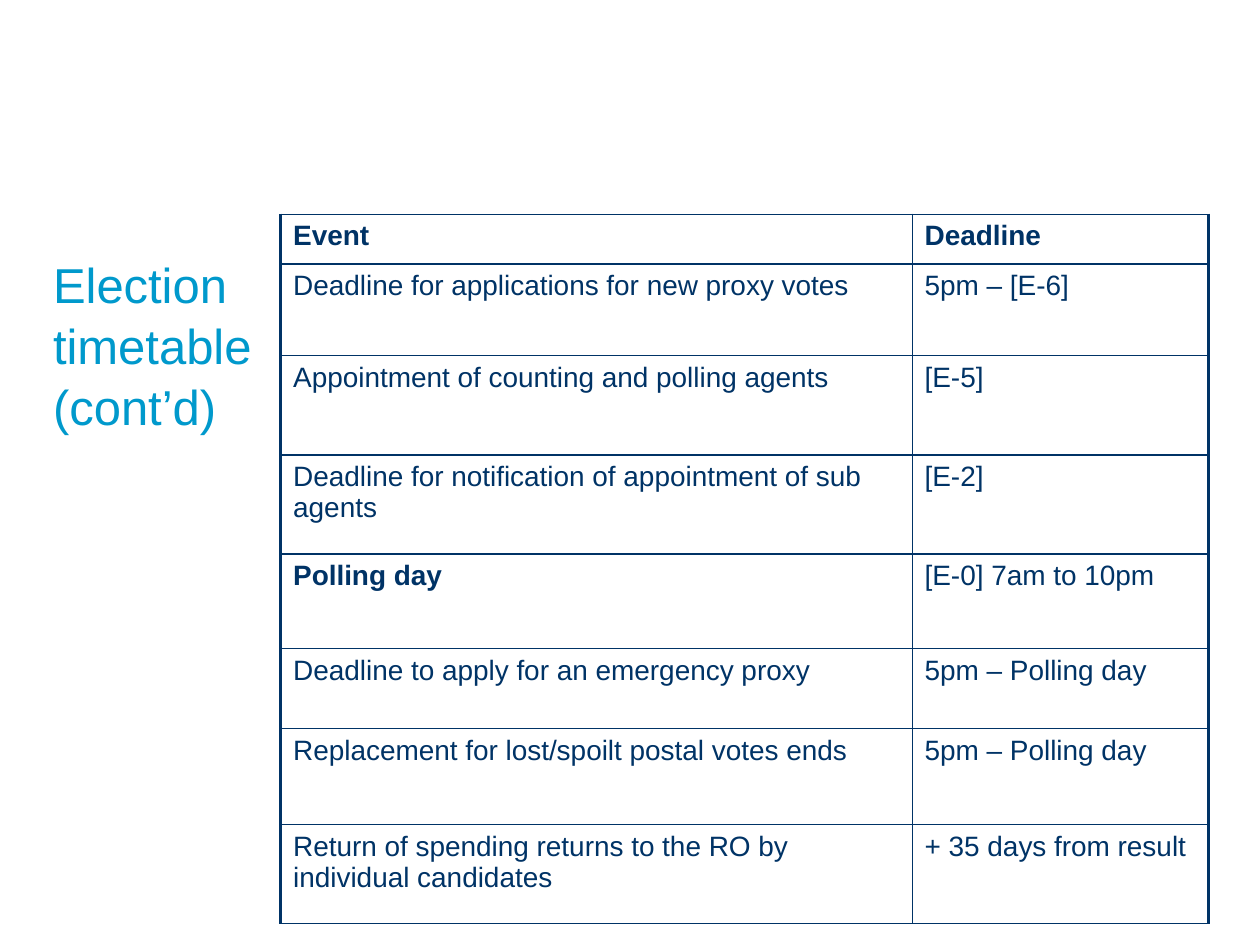
from dataclasses import dataclass

from pptx import Presentation
from pptx.dml.color import RGBColor
from pptx.enum.text import MSO_ANCHOR
from pptx.oxml.ns import qn
from pptx.util import Cm, Pt
from lxml.etree import SubElement


@dataclass(frozen=True)
class Theme:
    font: str = "Arial"
    title_color: str = "0099CC"
    ink: str = "003366"
    title_size: float = 28
    body_size: float = 16
    thin: float = 1
    thick: float = 2.25


@dataclass(frozen=True)
class Row:
    event: str
    deadline: str
    height: float
    event_bold: bool = False
    deadline_bold: bool = False


THEME = Theme()
COLUMN_WIDTHS = (12.73, 5.97)
ROWS = [
    Row("Event", "Deadline", 1, True, True),
    Row("Deadline for applications for new proxy votes", "5pm – [E-6]", 1.85),
    Row("Appointment of counting and polling agents", "[E-5]", 2),
    Row("Deadline for notification of appointment of sub agents", "[E-2]", 2),
    Row("Polling day", "[E-0] 7am to 10pm", 1.9, True),
    Row("Deadline to apply for an emergency proxy", "5pm – Polling day", 1.62),
    Row("Replacement for lost/spoilt postal votes ends", "5pm – Polling day", 1.93),
    Row("Return of spending returns to the RO by individual candidates",
        "+ 35 days from result", 2),
]


def add_run(p, text: str, size: float, color: str, bold: bool = False) -> None:
    r = p.add_run()
    r.text = text
    r.font.name = THEME.font
    r.font.size = Pt(size)
    r.font.bold = bold
    r.font.color.rgb = RGBColor.from_string(color)


def set_borders(cell, left: float, right: float) -> None:
    """Draw the four cell borders; top and bottom are thin."""
    tc_pr = cell._tc.get_or_add_tcPr()
    widths = {"a:lnL": left, "a:lnR": right, "a:lnT": THEME.thin, "a:lnB": THEME.thin}
    for i, (tag, width) in enumerate(widths.items()):
        ln = SubElement(tc_pr, qn(tag), w=str(Pt(width)))
        fill = SubElement(ln, qn("a:solidFill"))
        SubElement(fill, qn("a:srgbClr"), val=THEME.ink)
        tc_pr.insert(i, ln)  # borders come before the fill


def fill_cell(cell, text: str, bold: bool, left: float, right: float) -> None:
    cell.fill.background()
    cell.margin_left = cell.margin_right = Cm(0.25)
    cell.margin_top = cell.margin_bottom = Cm(0.13)
    cell.vertical_anchor = MSO_ANCHOR.TOP
    add_run(cell.text_frame.paragraphs[0], text, THEME.body_size, THEME.ink, bold)
    set_borders(cell, left, right)


def add_title(s, text: str) -> None:
    sp = s.shapes.add_textbox(Cm(1.07), Cm(5.08), Cm(6.99), Cm(11.86))
    tf = sp.text_frame
    tf.word_wrap = True
    tf.margin_left = tf.margin_right = tf.margin_top = tf.margin_bottom = 0
    p = tf.paragraphs[0]
    p.line_spacing = 1.04
    add_run(p, text, THEME.title_size, THEME.title_color)


def add_timetable(s, rows: list[Row]) -> None:
    table = s.shapes.add_table(
        len(rows), len(COLUMN_WIDTHS), Cm(5.66), Cm(4.32),
        Cm(sum(COLUMN_WIDTHS)), Cm(sum(row.height for row in rows))).table
    table.first_row = table.horz_banding = False
    for column, width in zip(table.columns, COLUMN_WIDTHS):
        column.width = Cm(width)
    for i, row in enumerate(rows):
        table.rows[i].height = Cm(row.height)
        fill_cell(table.cell(i, 0), row.event, row.event_bold, THEME.thick, THEME.thin)
        fill_cell(table.cell(i, 1), row.deadline, row.deadline_bold, THEME.thin, THEME.thick)


def main() -> None:
    prs = Presentation()
    prs.slide_width, prs.slide_height = Cm(25.4), Cm(19.05)
    s = prs.slides.add_slide(prs.slide_layouts[6])

    # Heading on the left
    add_title(s, "Election timetable (cont’d)")

    # Events and their deadlines
    add_timetable(s, ROWS)

    prs.save("out.pptx")


if __name__ == "__main__":
    main()
